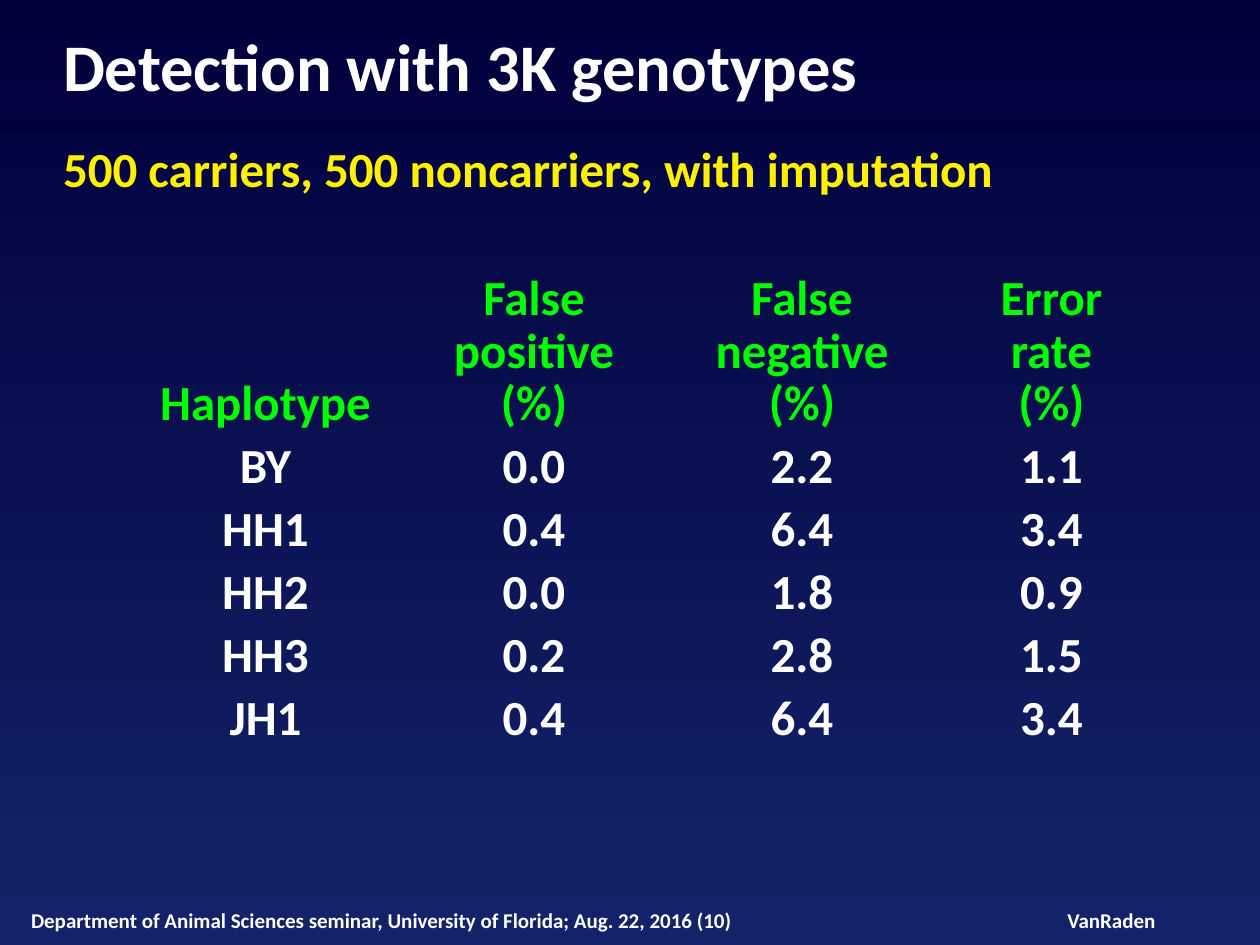
from dataclasses import dataclass

from pptx import Presentation
from pptx.dml.color import RGBColor
from pptx.enum.shapes import MSO_CONNECTOR as Connector
from pptx.enum.text import MSO_ANCHOR as Anchor, MSO_AUTO_SIZE as AutoSize, PP_ALIGN as Align
from pptx.oxml.ns import qn
from pptx.util import Pt
from lxml.etree import SubElement

EMU_PER_PX = 914400 / 126
NO_GRID_STYLE = "{2D5ABB26-0587-4C30-8999-92F81FD0307C}"


@dataclass(frozen=True)
class Theme:
    """Colours, font and type sizes of the slide."""
    font: str = "Calibri"
    night: str = "00003C"
    navy: str = "142369"
    white: str = "FFFFFF"
    yellow: str = "FFF000"
    green: str = "00FF00"
    title_size: int = 38
    text_size: int = 28
    footer_size: int = 12


THEME = Theme()
HEADINGS = ["Haplotype", "False\npositive\n(%)", "False\nnegative\n(%)", "Error\nrate\n(%)"]
ERROR_RATES = [
    ["BY", "0.0", "2.2", "1.1"],
    ["HH1", "0.4", "6.4", "3.4"],
    ["HH2", "0.0", "1.8", "0.9"],
    ["HH3", "0.2", "2.8", "1.5"],
    ["JH1", "0.4", "6.4", "3.4"],
]


def px(length):
    """Turn px into EMU."""
    return round(length * EMU_PER_PX)


def write(frame, text, size=THEME.text_size, color=THEME.white, align=Align.LEFT,
          leading=None, before=0, append=False):
    """Write each line of text as a formatted paragraph of the frame."""
    for index, line in enumerate(text.split("\n")):
        paragraph = frame.add_paragraph() if append or index else frame.paragraphs[0]
        paragraph.alignment = align
        paragraph.space_before = Pt(before)
        if leading:
            paragraph.line_spacing = Pt(leading)
        run = paragraph.add_run()
        run.text = line
        run.font.name, run.font.size, run.font.bold = THEME.font, Pt(size), True
        run.font.color.rgb = RGBColor.from_string(color)


def clear_margins(holder):
    """Remove the inner margins of a text frame or cell."""
    holder.margin_left = holder.margin_top = holder.margin_right = holder.margin_bottom = 0


def paint_background(slide):
    """Fill the slide from dark at the top to navy at the bottom."""
    fill = slide.background.fill
    fill.gradient()
    fill.gradient_angle = 270
    for stop, color in zip(fill.gradient_stops, (THEME.night, THEME.navy)):
        stop.color.rgb = RGBColor.from_string(color)


def add_header(slide, left, top, width, height):
    """Place the title with its subtitle and the rule between them."""
    rule_y = top + 101
    rule = slide.shapes.add_connector(Connector.STRAIGHT, 0, px(rule_y), px(1260), px(rule_y))
    rule.line.color.rgb = RGBColor.from_string(THEME.night)
    rule.line.width = Pt(6.5)
    SubElement(rule._element.spPr, qn("a:effectLst"))

    title = slide.shapes.title
    title.left, title.top, title.width, title.height = map(px, (left, top, width, height))
    frame = title.text_frame
    clear_margins(frame)
    frame.word_wrap, frame.vertical_anchor = True, Anchor.TOP
    frame.auto_size = AutoSize.SHAPE_TO_FIT_TEXT
    write(frame, "Detection with 3K genotypes", size=THEME.title_size)
    write(frame, "500 carriers, 500 noncarriers, with imputation",
          color=THEME.yellow, before=19.5, append=True)


def add_error_table(slide, left, top, widths, heading_height, row_height):
    """Place the table of error rates by haplotype."""
    rows = [HEADINGS, *ERROR_RATES]
    heights = [heading_height] + [row_height] * len(ERROR_RATES)
    table = slide.shapes.add_table(len(rows), len(widths), px(left), px(top),
                                   px(sum(widths)), px(sum(heights))).table
    table.first_row = table.horz_banding = False
    table._tbl.tblPr.find(qn("a:tableStyleId")).text = NO_GRID_STYLE
    for column, width in zip(table.columns, widths):
        column.width = px(width)
    for r, (values, height) in enumerate(zip(rows, heights)):
        table.rows[r].height = px(height)
        heading = r == 0
        for c, value in enumerate(values):
            cell = table.cell(r, c)
            cell.fill.background()
            clear_margins(cell)
            if c == 2:
                cell.margin_right = px(88)
            cell.vertical_anchor = Anchor.BOTTOM if heading else Anchor.TOP
            write(cell.text_frame, value, color=THEME.green if heading else THEME.white,
                  align=Align.CENTER, leading=30 if heading else 36)


def add_footer(slide, left, top, height):
    """Place the seminar line and the speaker's name."""
    seminar = "Department of Animal Sciences seminar, University of Florida; Aug. 22, 2016 (10)"
    for text, offset, width, wrap, align in (
        (seminar, 0, 777, True, Align.LEFT),
        ("VanRaden", 1036, 89, False, Align.CENTER),
    ):
        box = slide.shapes.add_textbox(px(left + offset), px(top), px(width), px(height))
        frame = box.text_frame
        clear_margins(frame)
        frame.word_wrap, frame.vertical_anchor = wrap, Anchor.MIDDLE
        frame.auto_size = AutoSize.SHAPE_TO_FIT_TEXT
        write(frame, text, size=THEME.footer_size, align=align)


def main():
    """Build and save the slide."""
    deck = Presentation()
    deck.slide_width, deck.slide_height = px(1260), px(945)
    slide = deck.slides.add_slide(deck.slide_layouts[5])
    paint_background(slide)
    add_header(slide, 63, 25, 1134, 174)
    add_error_table(slide, 156, 276, (219, 318, 306, 105), 158, 63)
    add_footer(slide, 31, 908, 25)
    deck.save("out.pptx")


if __name__ == "__main__":
    main()
